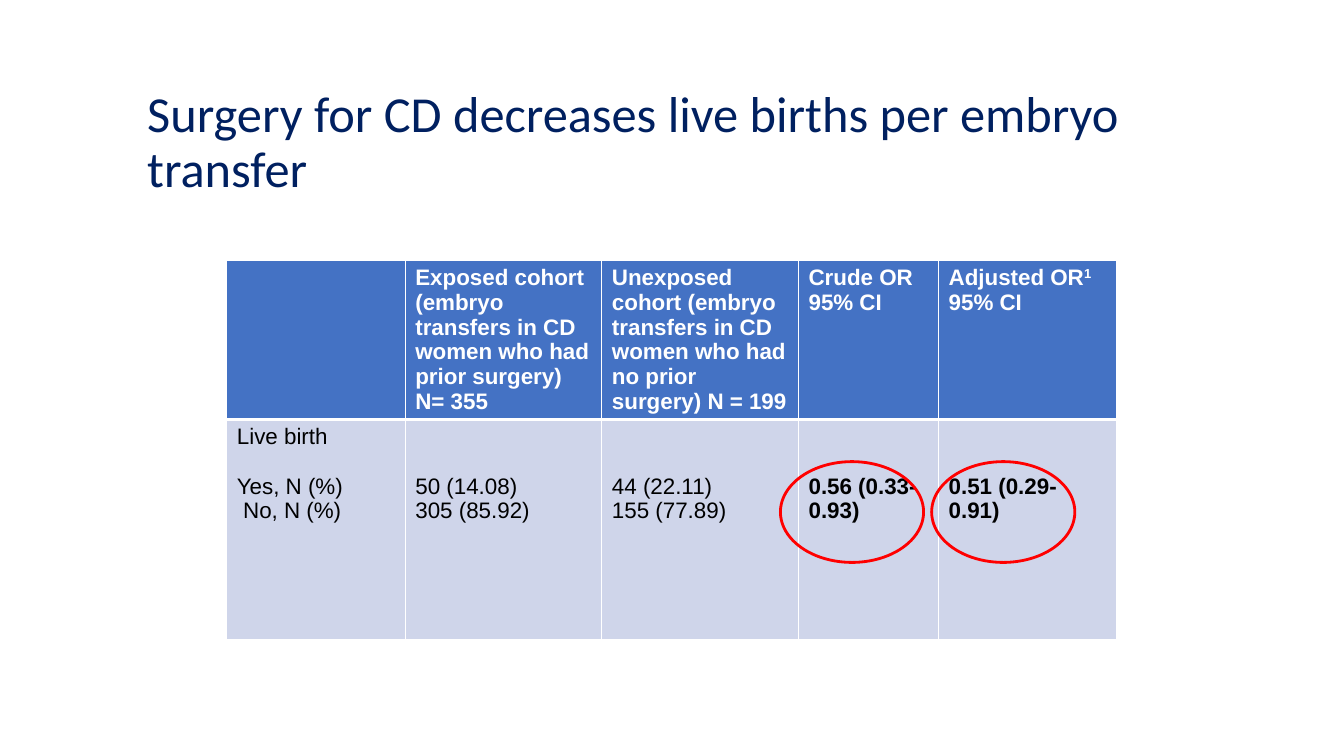
from lxml import etree
from pptx import Presentation
from pptx.dml.color import RGBColor
from pptx.enum import shapes, text
from pptx.oxml import ns
from pptx.util import Inches, Pt

COLORS = {"navy": "002060", "header": "4472C4", "body": "CFD5EA",
          "white": "FFFFFF", "black": "000000", "red": "FF0000"}
COLUMN_WIDTHS = [1.77, 1.95, 1.95, 1.39, 1.77]
ROW_HEIGHTS = [1.53, 2.18]
ROWS = [
    [[],
     ["Exposed cohort (embryo transfers in CD women who had prior surgery) N= 355"],
     ["Unexposed cohort (embryo transfers in CD women who had no prior surgery) N = 199"],
     ["Crude OR", "95% CI"],
     ["Adjusted OR^1", "95% CI"]],
    [["Live birth", "Yes, N (%)", " No, N (%)"],
     ["50 (14.08)", "305 (85.92)"],
     ["44 (22.11)", "155 (77.89)"],
     ["0.56 (0.33-0.93)"],
     ["0.51 (0.29-0.91)"]],
]


def add_span(para, words, color, **formats):
    span = para.add_run()
    span.text = words
    for name, value in formats.items():
        setattr(span.font, name, value)
    span.font.color.rgb = RGBColor.from_string(COLORS[color])
    return span


def add_borders(cell, bottom_width):
    properties = cell._tc.get_or_add_tcPr()
    for side, width in (("L", 1), ("R", 1), ("T", 1), ("B", bottom_width)):
        line = etree.SubElement(properties, ns.qn(f"a:ln{side}"), w=str(Pt(width)))
        fill = etree.SubElement(line, ns.qn("a:solidFill"))
        etree.SubElement(fill, ns.qn("a:srgbClr"), val=COLORS["white"])


deck = Presentation()
deck.slide_width, deck.slide_height = Inches(13.33), Inches(7.5)
page = deck.slides.add_slide(deck.slide_layouts[5])

title = page.shapes.title
title.left, title.top = Inches(1.36), Inches(0.7)
title.width, title.height = Inches(11.5), Inches(1.45)
frame = title.text_frame
for name, value in {"word_wrap": True, "auto_size": text.MSO_AUTO_SIZE.NONE,
                    "vertical_anchor": text.MSO_ANCHOR.MIDDLE}.items():
    setattr(frame, name, value)
para = frame.paragraphs[0]
para.alignment = text.PP_ALIGN.LEFT
para.line_spacing = 0.9
add_span(para, "Surgery for CD decreases live births per embryo transfer",
         "navy", name="Calibri", size=Pt(36))

table = page.shapes.add_table(len(ROWS), len(COLUMN_WIDTHS), Inches(2.25), Inches(2.58),
                              Inches(sum(COLUMN_WIDTHS)), Inches(sum(ROW_HEIGHTS))).table
table.horz_banding = False
for column, width in zip(table.columns, COLUMN_WIDTHS):
    column.width = Inches(width)
for row, height in zip(table.rows, ROW_HEIGHTS):
    row.height = Inches(height)

for row_index, row in enumerate(ROWS):
    is_header = row_index == 0
    for column_index, lines in enumerate(row):
        cell = table.cell(row_index, column_index)
        add_borders(cell, 3 if is_header else 1)
        cell.fill.solid()
        cell.fill.fore_color.rgb = RGBColor.from_string(COLORS["header" if is_header else "body"])
        if not is_header and column_index > 0:
            cell.margin_top = Inches(0.54)
        formats = {"name": "Arial", "size": Pt(16), "bold": is_header or column_index > 2}
        color = "white" if is_header else "black"
        for line_index, line in enumerate(lines):
            para = cell.text_frame.paragraphs[0] if line_index == 0 else cell.text_frame.add_paragraph()
            words, _, superscript = line.partition("^")
            add_span(para, words, color, **formats)
            if superscript:
                span = add_span(para, superscript, color, **formats)
                span._r.get_or_add_rPr().set("baseline", "30000")
            if line == "Yes, N (%)":
                para.space_before = Pt(17.5)

for left in (7.74, 9.24):
    highlight = page.shapes.add_shape(shapes.MSO_SHAPE.OVAL, Inches(left), Inches(4.58),
                                      Inches(1.42), Inches(1))
    highlight.shadow.inherit = False
    highlight.fill.background()
    highlight.line.color.rgb = RGBColor.from_string(COLORS["red"])
    highlight.line.width = Pt(2)

deck.save("out.pptx")
